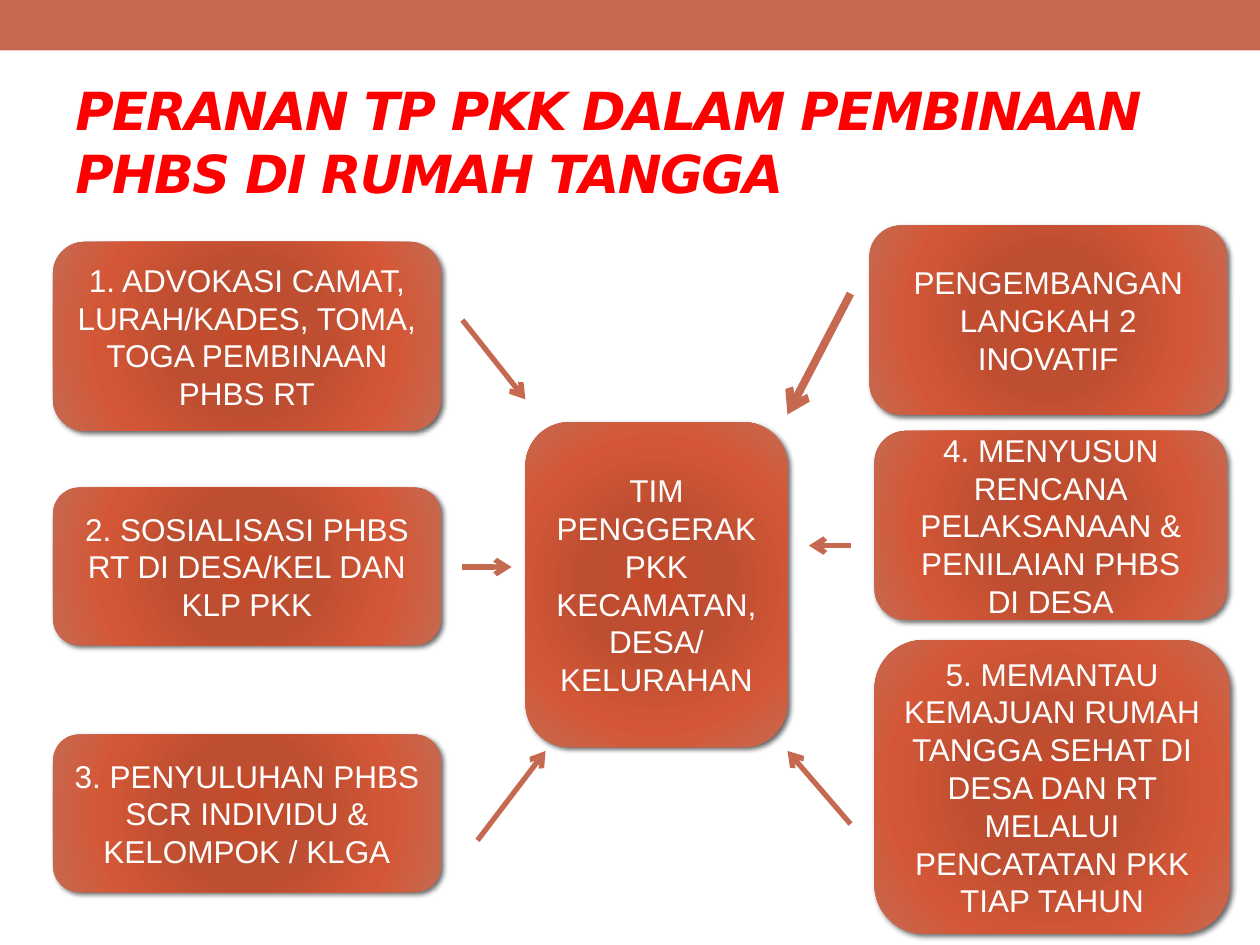
"""Build the slide on the role of TP PKK in fostering PHBS in households."""
from lxml import etree
from pptx import Presentation
from pptx.dml.color import RGBColor
from pptx.enum.shapes import MSO_CONNECTOR, MSO_SHAPE
from pptx.enum.text import MSO_ANCHOR, PP_ALIGN
from pptx.oxml import parse_xml
from pptx.oxml.ns import qn
from pptx.util import Inches, Pt

RECT = MSO_SHAPE.RECTANGLE
ROUND = MSO_SHAPE.ROUNDED_RECTANGLE
STRAIGHT = MSO_CONNECTOR.STRAIGHT
MIDDLE = MSO_ANCHOR.MIDDLE
CENTER = PP_ALIGN.CENTER
NS = 'xmlns:a="http://schemas.openxmlformats.org/drawingml/2006/main"'

COLORS = {
    "accent": "C66951",
    "title": "FF0000",
    "text": "FFFFFF",
    "shadow": "000000",
}
STOPS = [(0, "C34B2C"), (34, "BE4E31"), (70, "D35737"), (100, COLORS["accent"])]

gs = "".join(
    f'<a:gs pos="{pos * 1000}"><a:srgbClr val="{color}"/></a:gs>' for pos, color in STOPS
)
GRADIENT = (
    f'<a:gradFill {NS} rotWithShape="1"><a:gsLst>{gs}</a:gsLst><a:path path="circle">'
    '<a:fillToRect l="100000" t="100000" r="100000" b="100000"/></a:path></a:gradFill>'
)
SHADOW = (
    f'<a:outerShdw {NS} blurRad="{Pt(3)}" dist="{Pt(2)}" dir="2700000" rotWithShape="0">'
    f'<a:srgbClr val="{COLORS["shadow"]}"><a:alpha val="60000"/></a:srgbClr></a:outerShdw>'
)


def style(p, font, size, color):
    for r in p.runs:
        r.font.name = font
        r.font.size = Pt(size)
        r.font.color.rgb = RGBColor.from_string(COLORS[color])


prs = Presentation()
prs.slide_width = Inches(10)
prs.slide_height = Inches(7.5)
s = prs.slides.add_slide(prs.slide_layouts[6])

band = s.shapes.add_shape(RECT, 0, 0, prs.slide_width, Inches(0.4))
band.fill.solid()
band.fill.fore_color.rgb = RGBColor.from_string(COLORS["accent"])
band.line.fill.background()
band.shadow.inherit = False

title = s.shapes.add_textbox(Inches(0.5), Inches(0.58), Inches(9.5), Inches(1.08))
tf = title.text_frame
tf.word_wrap = True
tf.vertical_anchor = MIDDLE
tf.text = "PERANAN TP PKK DALAM PEMBINAAN PHBS DI RUMAH TANGGA"
style(tf.paragraphs[0], "DejaVu Sans", 30, "title")
r = tf.paragraphs[0].runs[0]
r.font.bold = True
r.font.italic = True
r.font._element.set("spc", "-100")

boxes = [
    (0.42, 1.92, 3.08, 1.5, "1. ADVOKASI CAMAT, LURAH/KADES, TOMA, TOGA PEMBINAAN PHBS RT"),
    (0.42, 3.87, 3.08, 1.25, "2. SOSIALISASI PHBS RT DI DESA/KEL DAN KLP PKK"),
    (0.42, 5.83, 3.08, 1.25, "3. PENYULUHAN PHBS SCR INDIVIDU & KELOMPOK / KLGA"),
    (4.17, 3.35, 2.08, 2.58, "TIM PENGGERAK PKK KECAMATAN, DESA/ KELURAHAN"),
    (6.9, 1.79, 2.84, 1.5, "PENGEMBANGAN LANGKAH 2\nINOVATIF"),
    (6.94, 3.42, 2.8, 1.5, "4. MENYUSUN\nRENCANA\nPELAKSANAAN & PENILAIAN PHBS\nDI DESA"),
    (6.94, 5.08, 2.82, 2.33, "5. MEMANTAU KEMAJUAN RUMAH TANGGA SEHAT DI DESA DAN RT "
                             "MELALUI PENCATATAN PKK TIAP TAHUN"),
]
for left, top, width, height, text in boxes:
    sp = s.shapes.add_shape(ROUND, Inches(left), Inches(top), Inches(width), Inches(height))
    sp.line.fill.background()
    sp.shadow.inherit = False
    props = sp._element.spPr
    props.find(qn("a:prstGeom")).addnext(parse_xml(GRADIENT))
    props.find(qn("a:effectLst")).append(parse_xml(SHADOW))
    tf = sp.text_frame
    tf.word_wrap = True
    tf.vertical_anchor = MIDDLE
    tf.text = text
    for p in tf.paragraphs:
        p.alignment = CENTER
        style(p, "Arial", 18, "text")

arrows = [
    (6.75, 2.33, 6.25, 3.29, 4.5),
    (6.75, 4.33, 6.42, 4.33, 3),
    (6.75, 6.54, 6.25, 5.96, 3),
    (3.67, 4.5, 4.06, 4.5, 3),
    (3.67, 2.54, 4.17, 3.17, 3),
    (3.79, 6.67, 4.33, 5.96, 3),
]
for x1, y1, x2, y2, weight in arrows:
    arrow = s.shapes.add_connector(STRAIGHT, Inches(x1), Inches(y1), Inches(x2), Inches(y2))
    arrow.line.color.rgb = RGBColor.from_string(COLORS["accent"])
    arrow.line.width = Pt(weight)
    props = arrow._element.spPr
    etree.SubElement(props.find(qn("a:ln")), qn("a:tailEnd"), type="arrow")
    etree.SubElement(props, qn("a:effectLst"))

prs.save("out.pptx")
